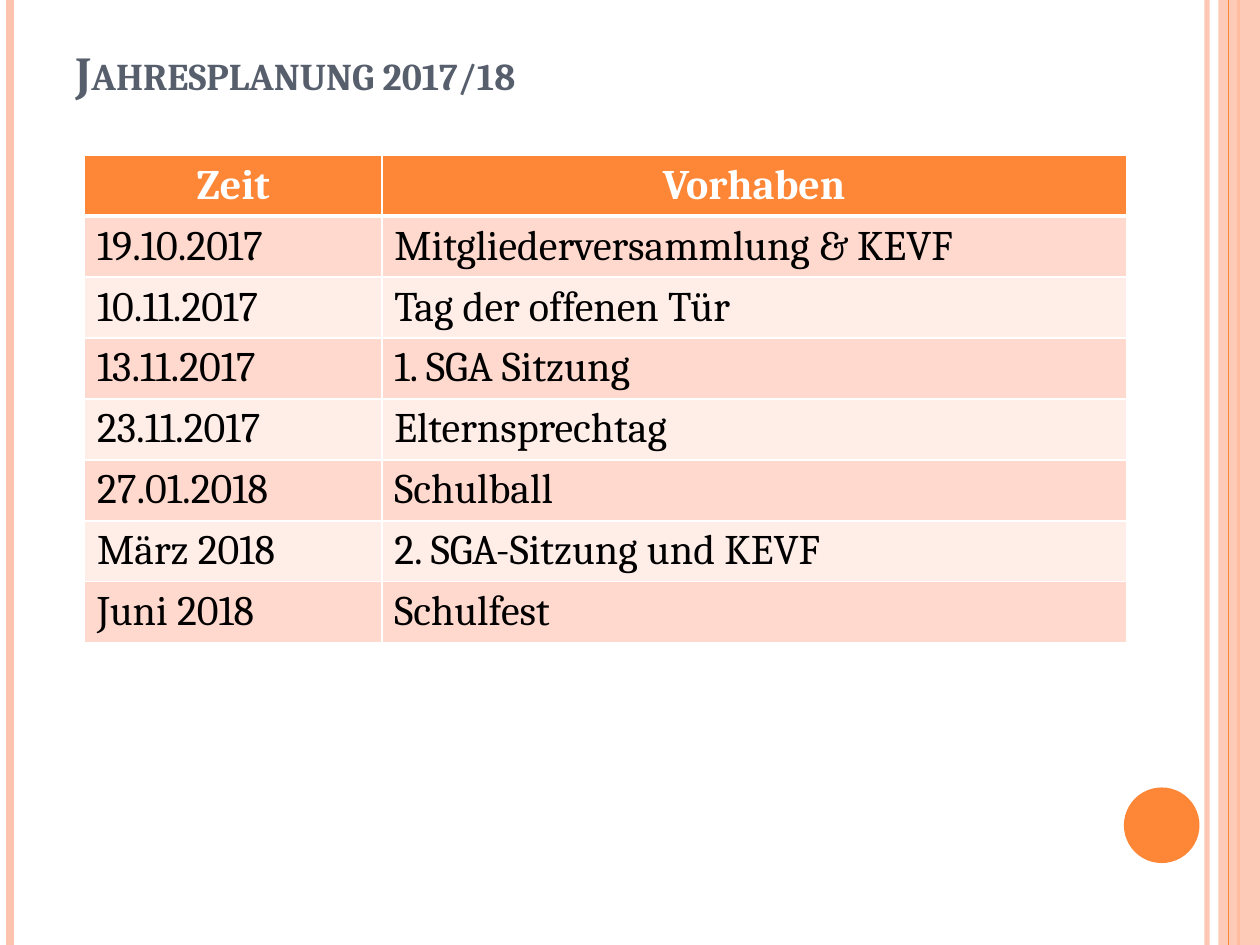
from dataclasses import dataclass

from lxml import etree
from pptx import Presentation
from pptx.dml.color import RGBColor
from pptx.enum import shapes, text
from pptx.oxml import ns
from pptx.util import Inches, Pt


@dataclass(frozen=True)
class Theme:
    font: str = "Cambria"
    title_size: int = 27
    table_size: int = 24
    title: str = "575F6D"
    accent: str = "FE8637"
    soft: str = "FEC3AE"
    bands: tuple = ("FFD9CE", "FFEDE8")
    body: str = "000000"
    white: str = "FFFFFF"


THEME = Theme()
WIDTH, HEIGHT = 10, 7.5
TITLE = "Jahresplanung 2017/18"
HEADER = ("Zeit", "Vorhaben")
EVENTS = [
    ("19.10.2017", "Mitgliederversammlung & KEVF"),
    ("10.11.2017", "Tag der offenen Tür"),
    ("13.11.2017", "1. SGA Sitzung"),
    ("23.11.2017", "Elternsprechtag"),
    ("27.01.2018", "Schulball"),
    ("März 2018", "2. SGA-Sitzung und KEVF"),
    ("Juni 2018", "Schulfest"),
]
COLUMN_WIDTHS = (2.36, 5.91)
ROW_HEIGHT = 0.48
TABLE_LEFT, TABLE_TOP = 0.67, 1.23
LEFT_RULES = [(9.58, THEME.soft, 3, 93), (0.08, THEME.soft, 4.5, 100), (9.83, THEME.accent, 1.5, 100)]
EDGE_RULE = (9.75, THEME.accent, 0.75, 100)


def add_element(parent, tag, **attributes):
    return etree.SubElement(parent, ns.qn(tag), attributes)


def set_alpha(fill_parent, percent):
    color = fill_parent.find(".//" + ns.qn("a:srgbClr"))
    add_element(color, "a:alpha", val=str(percent * 1000))


def add_rule(slide, x, color, weight, opacity):
    rule = slide.shapes.add_connector(
        shapes.MSO_CONNECTOR.STRAIGHT, Inches(x), 0, Inches(x), Inches(HEIGHT))
    rule.line.color.rgb = RGBColor.from_string(color)
    rule.line.width = Pt(weight)
    properties = rule._element.spPr
    if opacity < 100:
        set_alpha(properties, opacity)
    add_element(properties, "a:effectLst")


def add_filled(slide, kind, left, top, width, height, color):
    shape = slide.shapes.add_shape(kind, *map(Inches, (left, top, width, height)))
    shape.shadow.inherit = False
    shape.fill.solid()
    shape.fill.fore_color.rgb = RGBColor.from_string(color)
    shape.line.fill.background()
    return shape


def format_run(run, size, color, bold):
    run.font.name = THEME.font
    run.font.size = Pt(size)
    run.font.bold = bold
    run.font.color.rgb = RGBColor.from_string(color)


def add_borders(cell, top, bottom):
    properties = cell._tc.get_or_add_tcPr()
    for side, weight in (("L", 1), ("R", 1), ("T", top), ("B", bottom)):
        border = add_element(properties, f"a:ln{side}", w=str(Pt(weight)))
        fill = add_element(border, "a:solidFill")
        add_element(fill, "a:srgbClr", val=THEME.white)


def fill_cell(cell, content, row):
    is_header = row == 0
    add_borders(cell, top=3 if row == 1 else 1, bottom=3 if is_header else 1)
    cell.fill.solid()
    color = THEME.accent if is_header else THEME.bands[(row - 1) % 2]
    cell.fill.fore_color.rgb = RGBColor.from_string(color)
    cell.text_frame.text = content
    paragraph = cell.text_frame.paragraphs[0]
    paragraph.alignment = text.PP_ALIGN.CENTER if is_header else text.PP_ALIGN.LEFT
    format_run(paragraph.runs[0], THEME.table_size,
               THEME.white if is_header else THEME.body, is_header)


def add_schedule(slide):
    rows = [HEADER, *EVENTS]
    table = slide.shapes.add_table(
        len(rows), len(HEADER), Inches(TABLE_LEFT), Inches(TABLE_TOP),
        Inches(sum(COLUMN_WIDTHS)), Inches(ROW_HEIGHT * len(rows))).table
    for column, width in zip(table.columns, COLUMN_WIDTHS):
        column.width = Inches(width)
    for row, contents in enumerate(rows):
        for column, content in enumerate(contents):
            fill_cell(table.cell(row, column), content, row)


def add_title(slide):
    box = slide.shapes.add_textbox(*map(Inches, (0.5, 0.3, 8.17, 0.54)))
    frame = box.text_frame
    frame.word_wrap = True
    frame.vertical_anchor = text.MSO_ANCHOR.BOTTOM
    frame.text = TITLE
    run = frame.paragraphs[0].runs[0]
    format_run(run, THEME.title_size, THEME.title, True)
    run._r.get_or_add_rPr().set("cap", "small")


def main():
    """Build the yearly schedule slide."""
    presentation = Presentation()
    presentation.slide_width, presentation.slide_height = Inches(WIDTH), Inches(HEIGHT)
    slide = presentation.slides.add_slide(presentation.slide_layouts[6])
    for rule in LEFT_RULES:
        add_rule(slide, *rule)
    band = add_filled(slide, shapes.MSO_SHAPE.RECTANGLE, 9.67, 0, 0.33, HEIGHT, THEME.soft)
    set_alpha(band._element.spPr, 87)
    add_rule(slide, *EDGE_RULE)
    add_filled(slide, shapes.MSO_SHAPE.OVAL, 8.92, 6.25, 0.6, 0.6, THEME.accent)
    add_schedule(slide)
    add_title(slide)
    presentation.save("out.pptx")


if __name__ == "__main__":
    main()
